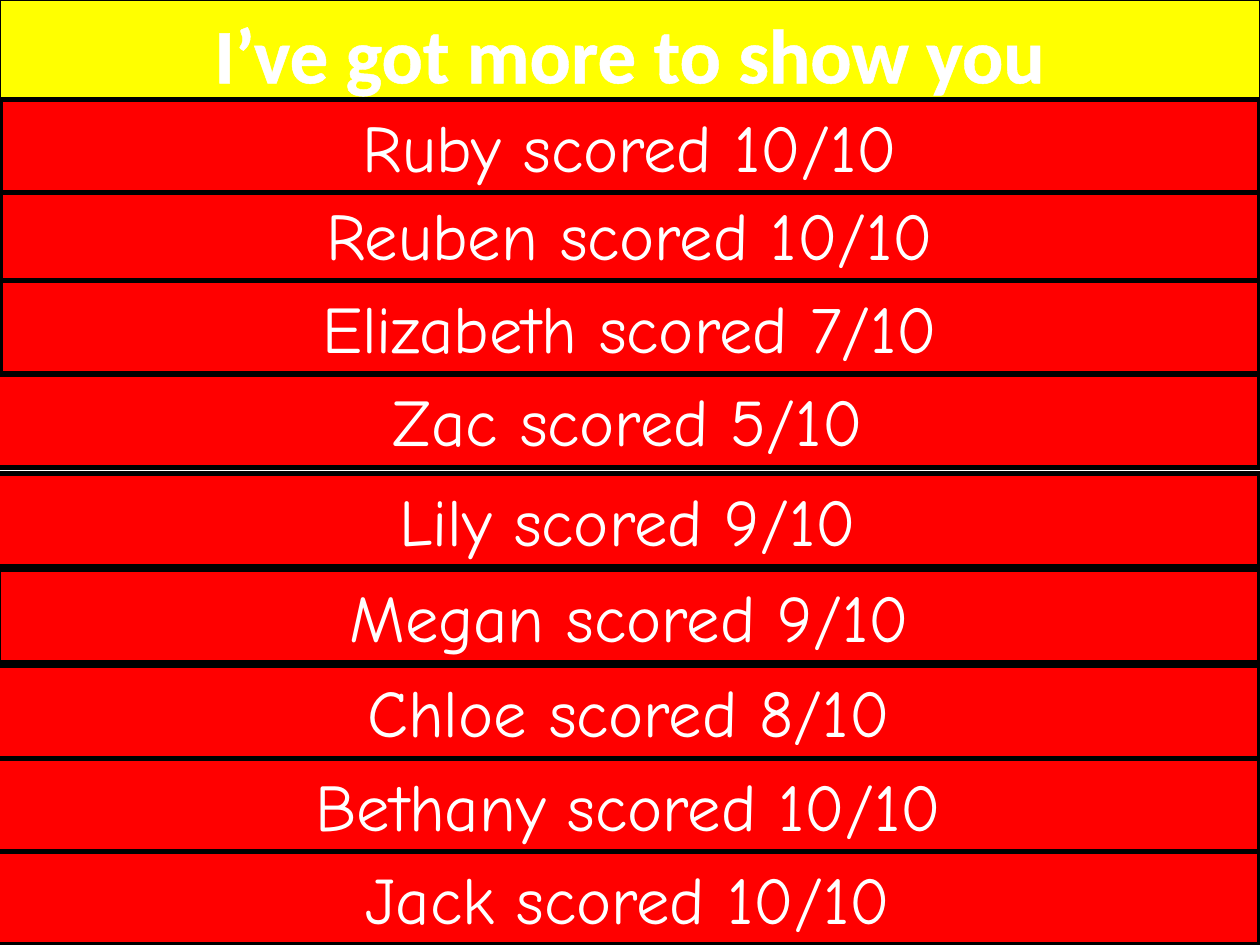
from lxml.etree import SubElement
from pptx import Presentation
from pptx.dml.color import RGBColor
from pptx.enum.shapes import MSO_SHAPE
from pptx.enum.text import MSO_ANCHOR, MSO_AUTO_SIZE, PP_ALIGN
from pptx.oxml.ns import qn
from pptx.util import Cm, Pt

YELLOW = RGBColor(0xFF, 0xFF, 0x00)
RED = RGBColor(0xFF, 0x00, 0x00)
BLACK = RGBColor(0x00, 0x00, 0x00)
WHITE = RGBColor(0xFF, 0xFF, 0xFF)

SLIDE_W = 25.4
ROW_H = 1.88
SCORES = [
    ("Reuben", 10, 0, 3.78),
    ("Elizabeth", 7, 0, 5.66),
    ("Zac", 5, -0.08, 7.54),
    ("Lily", 9, -0.08, 9.55),
    ("Megan", 9, -0.03, 11.48),
    ("Chloe", 8, -0.05, 13.41),
    ("Bethany", 10, -0.05, 15.29),
    ("Jack", 10, -0.08, 17.17),
    ("Ruby", 10, 0, 2.01),
]


def style_box(sp, fill, line_width):
    """Give a box its fill and black border."""
    sp.fill.solid()
    sp.fill.fore_color.rgb = fill
    sp.line.color.rgb = BLACK
    sp.line.width = Pt(line_width)


def write_text(sp, text, font, size, bold=False):
    """Write one centred white line and return its run."""
    tf = sp.text_frame
    tf.word_wrap = True
    tf.auto_size = MSO_AUTO_SIZE.SHAPE_TO_FIT_TEXT
    tf.vertical_anchor = MSO_ANCHOR.TOP
    p = tf.paragraphs[0]
    p.alignment = PP_ALIGN.CENTER
    r = p.add_run()
    r.text = text
    r.font.name = font
    r.font.size = Pt(size)
    r.font.bold = bold
    r.font.color.rgb = WHITE
    return r


def outline_text(r, color, width):
    """Draw an outline around the letters of a run."""
    rPr = r.font._element
    ln = SubElement(rPr, qn("a:ln"), w=str(Pt(width)))
    fill = SubElement(ln, qn("a:solidFill"))
    SubElement(fill, qn("a:srgbClr"), val=str(color))
    rPr.insert(0, ln)


def add_title(s, text):
    """Format the title placeholder as the yellow banner."""
    sp = s.shapes.title
    sp.left, sp.top, sp.width, sp.height = Cm(0), Cm(0), Cm(SLIDE_W), Cm(2.13)
    style_box(sp, YELLOW, 1)
    r = write_text(sp, text, "Calibri", 44, bold=True)
    outline_text(r, WHITE, 1.4)


def add_score(s, name, score, left, top):
    """Add a red row with one pupil's score."""
    sp = s.shapes.add_shape(
        MSO_SHAPE.RECTANGLE, Cm(left), Cm(top), Cm(SLIDE_W - left), Cm(ROW_H))
    sp.shadow.inherit = False
    style_box(sp, RED, 3)
    write_text(sp, f"{name} scored {score}/10", "Comic Neue", 38)


def main():
    """Build the score slide."""
    prs = Presentation()
    prs.slide_width, prs.slide_height = Cm(SLIDE_W), Cm(19.05)
    s = prs.slides.add_slide(prs.slide_layouts[5])
    add_title(s, "I’ve got more to show you")
    for name, score, left, top in SCORES:
        add_score(s, name, score, left, top)
    prs.save("out.pptx")


if __name__ == "__main__":
    main()
